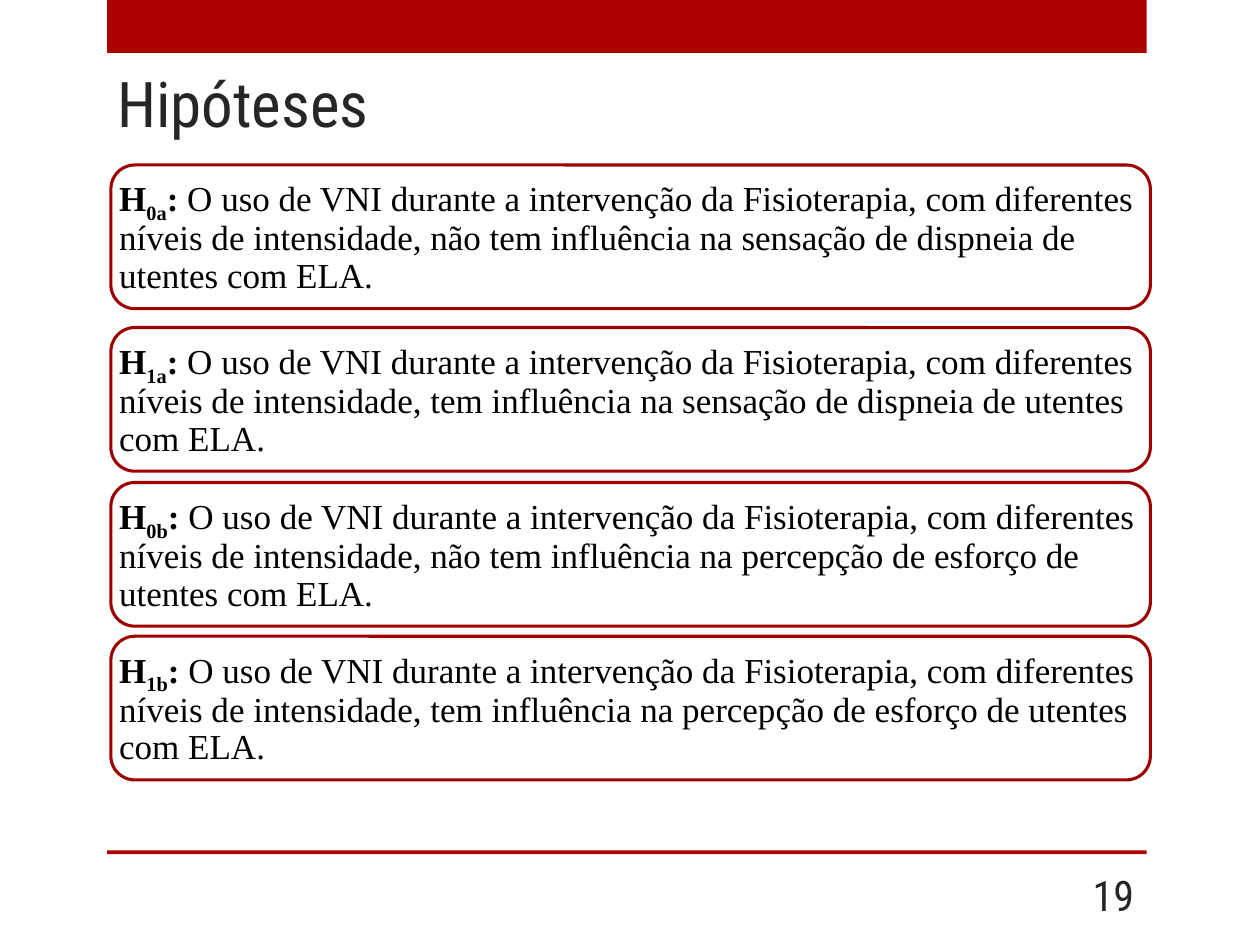
from dataclasses import dataclass
from pptx import Presentation
from pptx.dml.color import RGBColor
from pptx.enum.shapes import MSO_SHAPE
from pptx.enum.text import MSO_ANCHOR, MSO_AUTO_SIZE, PP_ALIGN
from pptx.util import Inches, Pt

RECT, ROUND = MSO_SHAPE.RECTANGLE, MSO_SHAPE.ROUNDED_RECTANGLE
LEFT, RIGHT = PP_ALIGN.LEFT, PP_ALIGN.RIGHT
MIDDLE, BOTTOM = MSO_ANCHOR.MIDDLE, MSO_ANCHOR.BOTTOM

TITLE = "Hipóteses"
PAGE = "19"
STEM = ("O uso de VNI durante a intervenção da Fisioterapia, com diferentes "
        "níveis de intensidade, {} influência na {} de utentes com ELA.")
HYPOTHESES = [
    ("0a", "não tem", "sensação de dispneia", 1.31),
    ("1a", "tem", "sensação de dispneia", 2.6),
    ("0b", "não tem", "percepção de esforço", 3.83),
    ("1b", "tem", "percepção de esforço", 5.05),
]


@dataclass(frozen=True)
class Theme:
    bar: RGBColor = RGBColor.from_string("AD0101")
    border: RGBColor = RGBColor.from_string("9D0101")
    heading: RGBColor = RGBColor.from_string("262626")
    body: RGBColor = RGBColor.from_string("000000")
    paper: RGBColor = RGBColor.from_string("FFFFFF")
    heading_font: str = "Roboto Condensed"
    body_font: str = "Times New Roman"
    title_size: int = 36
    page_size: int = 24
    body_size: int = 20


T = Theme()
SLIDE_W, SLIDE_H = 10, 7.5
BAR_X, CARD_X, COL_W = 0.85, 0.88, 8.25
CARD_H = 1.14


def add_box(s, kind, x, y, w, h, fill, line=None):
    sp = s.shapes.add_shape(kind, *map(Inches, (x, y, w, h)))
    sp.shadow.inherit = False
    sp.fill.solid()
    sp.fill.fore_color.rgb = fill
    if line is None:
        sp.line.fill.background()
    else:
        sp.line.color.rgb = line
        sp.line.width = Pt(1.75)
    return sp


def style(p, font, size, color, align=LEFT):
    p.alignment = align
    p.font.name, p.font.size = font, Pt(size)
    p.font.color.rgb = color


def set_heading(sp, text, size, anchor, align=LEFT):
    tf = sp.text_frame
    tf.text = text
    tf.word_wrap = True
    tf.auto_size = MSO_AUTO_SIZE.NONE
    tf.vertical_anchor = anchor
    style(tf.paragraphs[0], T.heading_font, size, T.heading, align)


def add_hypothesis(s, code, verb, outcome, y):
    sp = add_box(s, ROUND, CARD_X, y, COL_W, CARD_H, T.paper, T.border)
    tf = sp.text_frame
    tf.word_wrap = True
    tf.vertical_anchor = MIDDLE
    tf.margin_left = tf.margin_right = Inches(0.01)
    tf.margin_top = tf.margin_bottom = 0
    p = tf.paragraphs[0]
    style(p, T.body_font, T.body_size, T.body)
    p.line_spacing = 0.9
    for text, bold, base in (("H", True, 0), (code, True, -25000), (": ", True, 0),
                             (STEM.format(verb, outcome), False, 0)):
        r = p.add_run()
        r.text = text
        r.font.bold = bold
        if base:
            r.font._element.set("baseline", str(base))


def main():
    prs = Presentation()
    prs.slide_width, prs.slide_height = Inches(SLIDE_W), Inches(SLIDE_H)
    s = prs.slides.add_slide(prs.slide_layouts[5])

    for y, h in ((0, 0.42), (0.9 * SLIDE_H, 0.03)):
        add_box(s, RECT, BAR_X, y, COL_W, h, T.bar)

    title = s.shapes.title
    title.left, title.top, title.width, title.height = map(Inches, (0.83, 0.52, 7.42, 0.64))
    set_heading(title, TITLE, T.title_size, BOTTOM)

    for hypothesis in HYPOTHESES:
        add_hypothesis(s, *hypothesis)

    page_w = COL_W / 10
    page = s.shapes.add_textbox(*map(Inches, (BAR_X + COL_W - page_w, 6.9, page_w, 0.4)))
    set_heading(page, PAGE, T.page_size, MIDDLE, RIGHT)

    prs.save("out.pptx")


if __name__ == "__main__":
    main()
